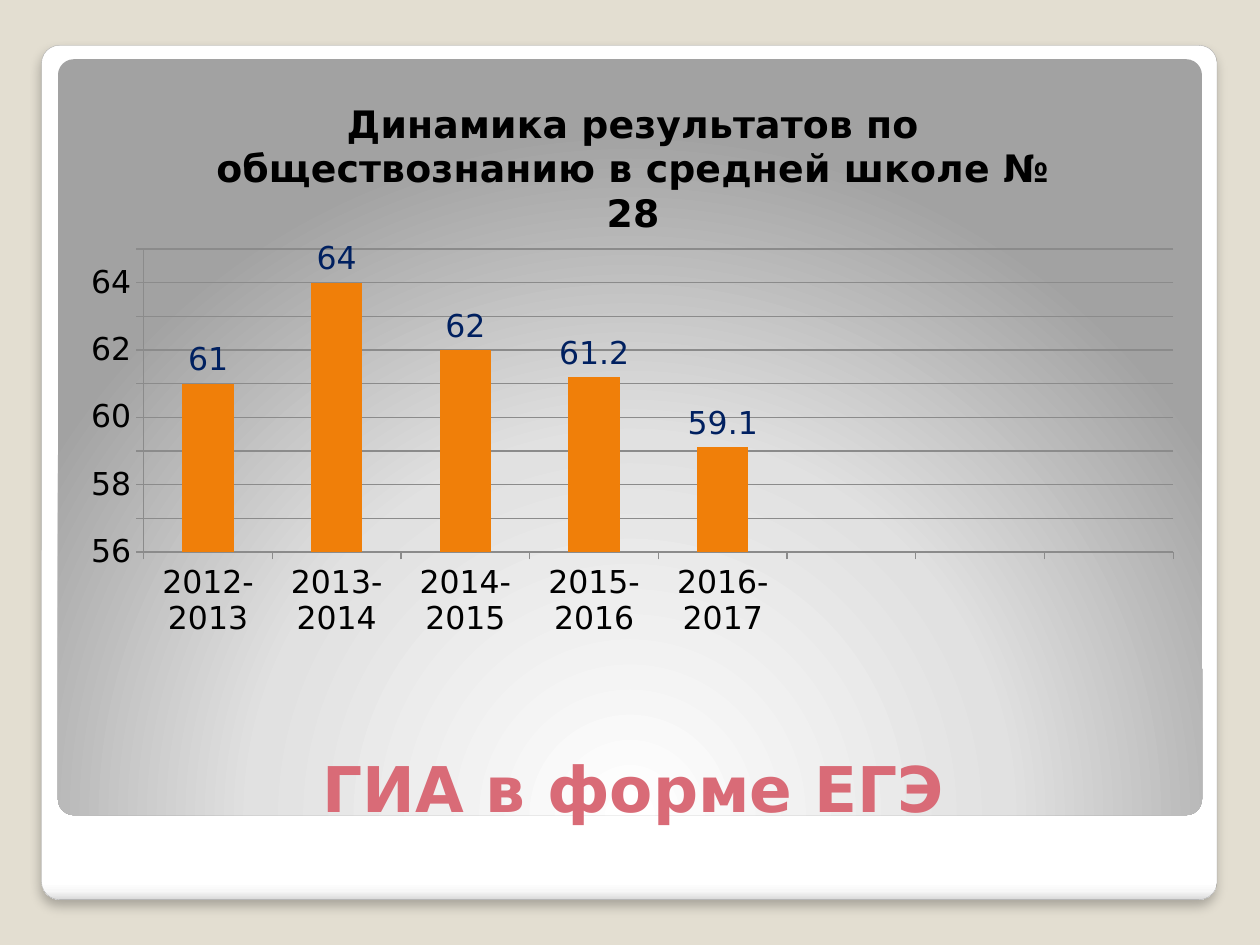
from lxml import etree
from pptx import Presentation, oxml
from pptx.chart import data
from pptx.dml import color
from pptx.enum import chart as ch, shapes, text
from pptx.oxml import ns
from pptx.util import Inches, Pt

FONT = "DejaVu Sans"
COLORS = {
    "background": "E3DED1",
    "edge": "A4A4A4",
    "shadow": "000000",
    "title": "D96B77",
    "text": "000000",
    "bar": "F07F09",
    "label": "002060",
    "grid": "8B8B8B",
}
CARD_STOPS = [(0, "FFFFFF"), (98, "FFFFFF"), (99, "F7F7F7"), (100, "DADADA")]
PANEL_STOPS = [(0, "FFFFFF"), (55, "E1E1E1"), (100, "A2A2A2")]
LINEAR = '<a:lin ang="5400000" scaled="0"/>'
RADIAL = ('<a:path path="circle"><a:fillToRect l="50000" t="175000" '
          'r="50000" b="-75000"/></a:path>')
RESULTS = [("2012-2013", 61), ("2013-2014", 64), ("2014-2015", 62),
           ("2015-2016", 61.2), ("2016-2017", 59.1)]
EMPTY_YEARS = 3


def rgb(name):
    return color.RGBColor.from_string(COLORS[name])


def style_font(font, size, name="text", bold=False):
    font.name = FONT
    font.size = Pt(size)
    font.bold = bold
    font.color.rgb = rgb(name)


def add_text(tf, content, size, name="text", bold=False, align=text.PP_ALIGN.CENTER):
    p = tf.paragraphs[0]
    p.alignment = align
    r = p.add_run()
    r.text = content
    style_font(r.font, size, name, bold)


def add_rounded(s, box, stops, direction):
    sp = s.shapes.add_shape(shapes.MSO_SHAPE.ROUNDED_RECTANGLE, *box)
    sp.adjustments[0] = 0.021
    sp.shadow.inherit = False
    sp.line.fill.background()
    sp.fill.solid()
    marks = "".join(f'<a:gs pos="{pos * 1000}"><a:srgbClr val="{value}"/></a:gs>'
                    for pos, value in stops)
    grad = oxml.parse_xml(f'<a:gradFill {ns.nsdecls("a")} rotWithShape="1">'
                          f'<a:gsLst>{marks}</a:gsLst>{direction}</a:gradFill>')
    pr = sp._element.spPr
    pr.replace(pr.find(ns.qn("a:solidFill")), grad)
    return sp


def add_card(s, box):
    sp = add_rounded(s, box, CARD_STOPS, LINEAR)
    sp.line.color.rgb = rgb("edge")
    sp.line.width = Pt(0.16)
    effects = sp._element.spPr.find(ns.qn("a:effectLst"))
    effects.append(oxml.parse_xml(
        f'<a:outerShdw {ns.nsdecls("a")} blurRad="{Pt(6)}" dist="{Pt(4)}" '
        f'dir="5400000" algn="tl" rotWithShape="0"><a:srgbClr val="{COLORS["shadow"]}">'
        '<a:alpha val="25000"/></a:srgbClr></a:outerShdw>'))


def add_title(s, box):
    tf = s.shapes.add_textbox(*box).text_frame
    tf.word_wrap = True
    tf.vertical_anchor = text.MSO_ANCHOR.BOTTOM
    add_text(tf, "ГИА в форме ЕГЭ", 36, "title", bold=True)


def set_plot_layout(chart, **fractions):
    area = chart._chartSpace.chart.plotArea
    for old in area.findall(ns.qn("c:layout")):
        area.remove(old)
    layout = etree.Element(ns.qn("c:layout"))
    manual = etree.SubElement(layout, ns.qn("c:manualLayout"))
    settings = {"layoutTarget": "inner", "xMode": "edge", "yMode": "edge", **fractions}
    for tag, value in settings.items():
        etree.SubElement(manual, ns.qn(f"c:{tag}")).set("val", str(value))
    area.insert(0, layout)


def add_results_chart(s, box):
    results = data.CategoryChartData()
    results.categories = [year for year, _ in RESULTS] + [""] * EMPTY_YEARS
    results.add_series("Series 1", [score for _, score in RESULTS] + [None] * EMPTY_YEARS)
    chart = s.shapes.add_chart(ch.XL_CHART_TYPE.COLUMN_CLUSTERED, *box, results).chart
    style_font(chart.font, 18)
    chart.has_legend = False
    chart.has_title = True
    add_text(chart.chart_title.text_frame,
             "Динамика результатов по обществознанию в средней школе № 28",
             21.6, bold=True)
    chart.chart_title.include_in_layout = False

    plot = chart.plots[0]
    plot.vary_by_categories = False
    plot.gap_width = 150
    bars = plot.series[0]
    bars.format.fill.solid()
    bars.format.fill.fore_color.rgb = rgb("bar")
    bars.invert_if_negative = False
    labels = bars.data_labels
    labels.show_value = True
    labels.position = ch.XL_LABEL_POSITION.OUTSIDE_END
    style_font(labels.font, 18, "label")

    scores = chart.value_axis
    scores.minimum_scale, scores.maximum_scale, scores.major_unit = 56, 65, 1
    scores.has_major_gridlines = True
    scores.tick_labels.number_format = "General"
    scores.tick_labels.number_format_is_linked = False
    for axis in (chart.category_axis, scores):
        axis.major_tick_mark = ch.XL_TICK_MARK.OUTSIDE
        axis.format.line.color.rgb = rgb("grid")
        style_font(axis.tick_labels.font, 18)
    scores.major_gridlines.format.line.color.rgb = rgb("grid")
    set_plot_layout(chart, x=0.066, y=0.305, w=0.913, h=0.525)


def main():
    prs = Presentation()
    prs.slide_width, prs.slide_height = Inches(10), Inches(7.5)
    s = prs.slides.add_slide(prs.slide_layouts[6])
    s.background.fill.solid()
    s.background.fill.fore_color.rgb = rgb("background")
    add_card(s, (Inches(0.33), Inches(0.36), Inches(9.33), Inches(6.78)))
    add_rounded(s, (Inches(0.46), Inches(0.47), Inches(9.08), Inches(6)),
                PANEL_STOPS, RADIAL)
    add_title(s, (Inches(0.55), Inches(5.45), Inches(8.95), Inches(1.15)))
    add_results_chart(s, (Inches(0.55), Inches(0.58), Inches(8.95), Inches(4.58)))
    prs.save("out.pptx")


if __name__ == "__main__":
    main()
